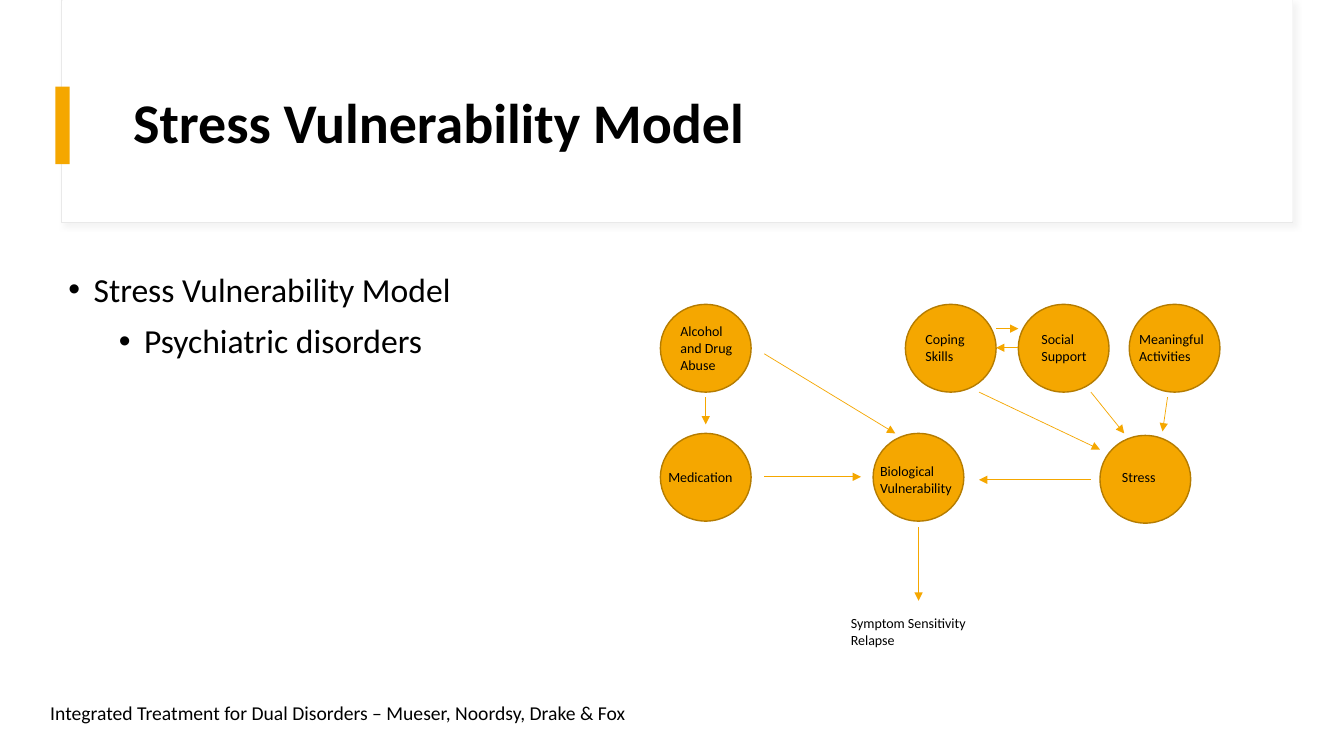
from lxml.etree import SubElement
from pptx import Presentation
from pptx.dml.color import RGBColor
from pptx.enum.shapes import MSO_CONNECTOR as CONN, MSO_SHAPE as SHAPE
from pptx.enum.text import MSO_ANCHOR as ANCHOR, MSO_AUTO_SIZE as AUTO, PP_ALIGN as ALIGN
from pptx.oxml.ns import qn
from pptx.util import Emu, Pt

BLACK = RGBColor(0x00, 0x00, 0x00)
WHITE = RGBColor(0xFF, 0xFF, 0xFF)
AMBER = RGBColor(0xF5, 0xA7, 0x00)
BROWN = RGBColor(0xB5, 0x7C, 0x00)
PALE = RGBColor(0xE9, 0xE9, 0xE9)

PX = 9144  # 100 px to the inch
CIRCLE = (90, 87)

# name: circle left and top, label left, top, width and height
FACTORS = {
    "Alcohol and Drug Abuse": ((655, 302), (665, 315, 83, 61)),
    "Coping Skills": ((898, 302), (908, 323, 72, 44)),
    "Social Support": ((1010, 302), (1023, 323, 72, 44)),
    "Meaningful Activities": ((1120, 302), (1120, 323, 92, 44)),
    "Medication": ((655, 430), (653, 460, 94, 27)),
    "Biological Vulnerability": ((866, 430), (863, 454, 108, 44)),
    "Stress": ((1091, 432), (1103, 460, 66, 27)),
}

ARROWS = [
    (700, 394, 700, 421),    # abuse to medication
    (758, 473, 854, 473),    # medication to vulnerability
    (1082, 476, 971, 476),   # stress to vulnerability
    (758, 351, 888, 430),    # abuse to vulnerability
    (971, 389, 1091, 446),   # coping to stress
    (1082, 389, 1115, 430),  # support to stress
    (1158, 394, 1153, 428),  # activities to stress
    (988, 326, 1010, 326),   # coping to support
    (1010, 345, 988, 345),   # support to coping
    (911, 523, 911, 596),    # vulnerability to outcome
]


def emu(*lengths):
    return [Emu(n * PX) for n in lengths]


def assign(obj, values):
    for name, value in values.items():
        setattr(obj, name, value)


class Deck:
    font = "Calibri"

    def __init__(self, width, height):
        self.prs = Presentation()
        self.prs.slide_width, self.prs.slide_height = emu(width, height)
        self.s = self.prs.slides.add_slide(self.prs.slide_layouts[5])

    def add_text(self, p, text, size, bold=False):
        r = p.add_run()
        r.text = text
        assign(r.font, {"name": self.font, "size": Pt(size), "bold": bold})
        r.font.color.rgb = BLACK

    def title(self, text, box):
        sp = self.s.shapes.title
        sp.element.getparent().append(sp.element)  # in front of the panel
        assign(sp, dict(zip(("left", "top", "width", "height"), emu(*box))))
        tf = sp.text_frame
        assign(tf, {"vertical_anchor": ANCHOR.MIDDLE, "word_wrap": True,
                    "auto_size": AUTO.NONE})
        p = tf.paragraphs[0]
        assign(p, {"alignment": ALIGN.LEFT, "line_spacing": 0.9})
        self.add_text(p, text, 40, bold=True)

    def shape(self, kind, box, fill, line=None, weight=1):
        sp = self.s.shapes.add_shape(kind, *emu(*box))
        sp.shadow.inherit = False
        sp.fill.solid()
        sp.fill.fore_color.rgb = fill
        if line is None:
            sp.line.fill.background()
        else:
            sp.line.color.rgb = line
            sp.line.width = Pt(weight)
        return sp

    def soft_shadow(self, sp):
        effects = sp.element.spPr.find(qn("a:effectLst"))
        shadow = SubElement(effects, qn("a:outerShdw"), blurRad="50800",
                            dist="38100", dir="2700000", algn="tl", rotWithShape="0")
        color = SubElement(shadow, qn("a:srgbClr"), val="D9D9D9")
        SubElement(color, qn("a:alpha"), val="30000")

    def frame(self, box, wrap=True, auto_size=AUTO.SHAPE_TO_FIT_TEXT):
        tf = self.s.shapes.add_textbox(*emu(*box)).text_frame
        assign(tf, {"word_wrap": wrap, "auto_size": auto_size})
        return tf

    def label(self, text, box, size=10, wrap=True):
        self.add_text(self.frame(box, wrap).paragraphs[0], text, size)

    def bullets(self, items, box):
        """Items are (level, text) pairs."""
        tf = self.frame(box, auto_size=AUTO.NONE)
        for i, (level, text) in enumerate(items):
            p = tf.add_paragraph() if i else tf.paragraphs[0]
            assign(p, {"level": level, "line_spacing": 1.1,
                       "space_before": Pt(5 if level else 10)})
            pPr = p._p.get_or_add_pPr()
            pPr.set("marL", str((25 + 50 * level) * PX))
            pPr.set("indent", str(-25 * PX))
            SubElement(pPr, qn("a:buFont"), typeface="Arial")
            SubElement(pPr, qn("a:buChar"), char="•")
            self.add_text(p, text, 24)

    def arrow(self, ends):
        c = self.s.shapes.add_connector(CONN.STRAIGHT, *emu(*ends))
        c.line.color.rgb = AMBER
        c.line.width = Pt(0.5)
        SubElement(c.element.spPr.find(qn("a:ln")), qn("a:tailEnd"), type="triangle")
        SubElement(c.element.spPr, qn("a:effectLst"))


def main():
    deck = Deck(1333, 750)
    panel = deck.shape(SHAPE.RECTANGLE, (61, 0, 1221, 221), WHITE, PALE, 0.75)
    deck.soft_shadow(panel)
    deck.shape(SHAPE.RECTANGLE, (62, 0, 1220, 220), WHITE)
    deck.shape(SHAPE.RECTANGLE, (55, 86, 14, 77), AMBER)
    deck.title("Stress Vulnerability Model", (122, 60, 1112, 129))
    deck.bullets([(0, "Stress Vulnerability Model"), (1, "Psychiatric disorders")],
                 (58, 258, 1112, 404))
    deck.label("Integrated Treatment for Dual Disorders – Mueser, Noordsy, Drake & Fox",
               (40, 690, 653, 34), size=14, wrap=False)
    for name, (corner, label_box) in FACTORS.items():
        deck.shape(SHAPE.OVAL, corner + CIRCLE, AMBER, BROWN)
        deck.label(name, label_box)
    for ends in ARROWS:
        deck.arrow(ends)
    deck.label("Symptom Sensitivity Relapse", (834, 605, 165, 44))
    deck.prs.save("out.pptx")


if __name__ == "__main__":
    main()
